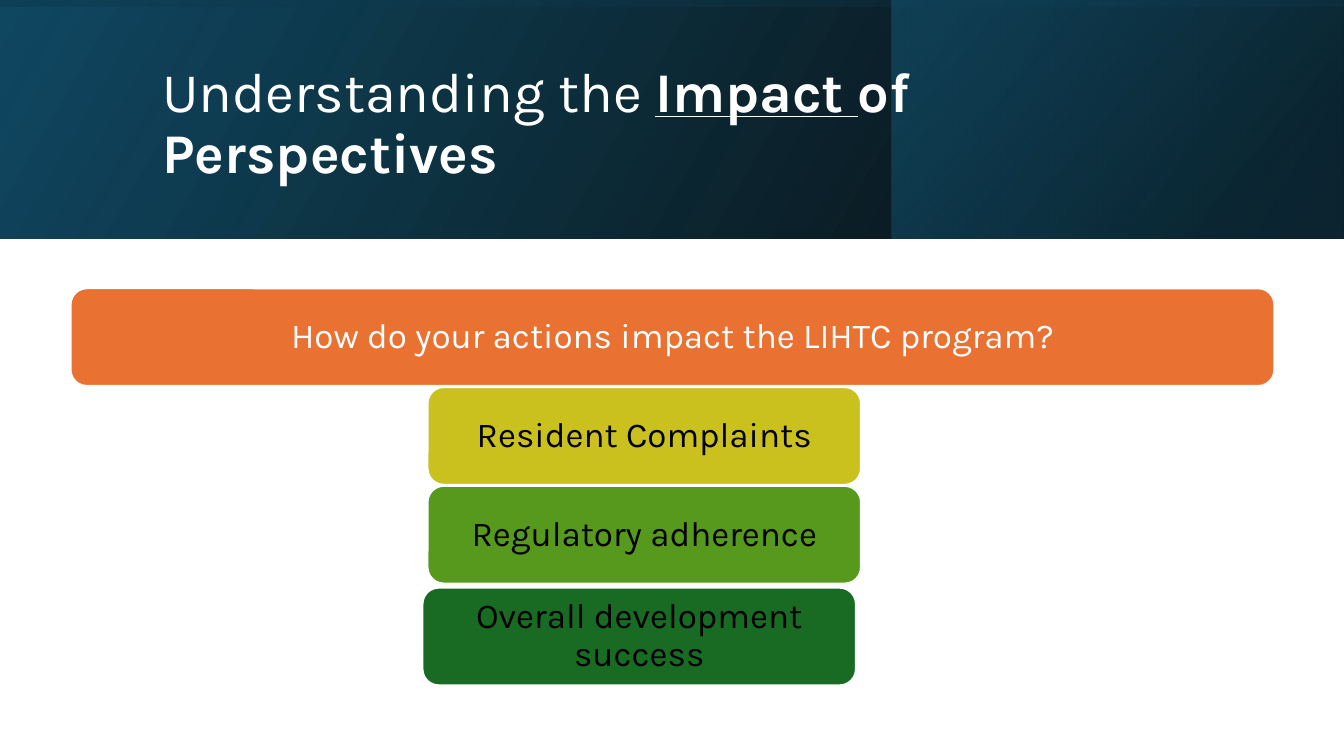
from dataclasses import dataclass

from lxml import etree
from pptx import Presentation
from pptx.dml.color import RGBColor
from pptx.enum.shapes import MSO_SHAPE
from pptx.enum.text import MSO_ANCHOR, MSO_AUTO_SIZE, PP_ALIGN
from pptx.oxml import parse_xml
from pptx.oxml.ns import nsdecls
from pptx.util import Inches, Pt

RECTANGLE, ROUNDED = MSO_SHAPE.RECTANGLE, MSO_SHAPE.ROUNDED_RECTANGLE
MIDDLE, NO_FIT = MSO_ANCHOR.MIDDLE, MSO_AUTO_SIZE.NONE
LEFT, CENTER = PP_ALIGN.LEFT, PP_ALIGN.CENTER

FONT = "Karla"
COLORS = {
    "white": "FFFFFF", "black": "000000", "navy": "104862",
    "deep": "0B3041", "blue": "156082", "orange": "E97132",
    "yellow": "CBC11E", "green": "56991D", "forest": "196B24",
}
CARD_HEIGHT = 0.97


@dataclass
class Stop:
    position: int
    color: str
    opacity: int


@dataclass
class Band:
    left: float
    top: float
    width: float
    height: float
    angle: int
    stops: tuple[Stop, Stop]
    rotation: int = 0


@dataclass
class Card:
    text: str
    left: float
    top: float
    width: float
    fill: str
    ink: str = "black"


@dataclass
class Span:
    text: str
    bold: bool = False
    underline: bool = False


BANDS = [
    Band(0, 0, 13.33, 2.37, 330, (Stop(0, "black", 96), Stop(100, "navy", 100))),
    Band(8.84, 0, 4.48, 2.37, 320, (Stop(19, "deep", 68), Stop(100, "blue", 48))),
    Band(5.48, -5.48, 2.37, 13.33, 350,
         (Stop(23, "navy", 16), Stop(99, "black", 45)), rotation=270),
]
TITLE = [
    Span("Understanding the "),
    Span("Impact ", bold=True, underline=True),
    Span("of Perspectives", bold=True),
]
CARDS = [
    Card("How do your actions impact the LIHTC program?", 0.7, 2.86, 11.94,
         "orange", "white"),
    Card("Resident Complaints", 4.24, 3.84, 4.3, "yellow"),
    Card("Regulatory adherence", 4.24, 4.82, 4.3, "green"),
    Card("Overall development success", 4.19, 5.83, 4.3, "forest"),
]


def rgb(name: str) -> RGBColor:
    return RGBColor.from_string(COLORS[name])


def add_band(page, band: Band) -> None:
    box = page.shapes.add_shape(RECTANGLE, Inches(band.left), Inches(band.top),
                                Inches(band.width), Inches(band.height))
    box.shadow.inherit = False
    box.line.fill.background()
    box.rotation = band.rotation
    properties = box.element.spPr
    properties.xfrm.set("flipH", "1")
    # Gradient with transparency
    gradient = parse_xml(
        f'<a:gradFill {nsdecls("a")} rotWithShape="1"><a:gsLst/>'
        f'<a:lin ang="{band.angle * 60000}" scaled="0"/></a:gradFill>')
    for stop in band.stops:
        gradient[0].append(etree.fromstring(
            f'<a:gs {nsdecls("a")} pos="{stop.position * 1000}">'
            f'<a:srgbClr val="{COLORS[stop.color]}">'
            f'<a:alpha val="{stop.opacity * 1000}"/></a:srgbClr></a:gs>'))
    properties.prstGeom.addnext(gradient)


def add_title(page, spans: list[Span]) -> None:
    title = page.shapes.title
    title.left, title.top = Inches(1.51), Inches(0.38)
    title.width, title.height = Inches(10.63), Inches(1.72)
    # Bring the title in front of the bands
    page.shapes.element.append(title.element)
    frame = title.text_frame
    frame.auto_size, frame.vertical_anchor = NO_FIT, MIDDLE
    para = frame.paragraphs[0]
    para.alignment, para.line_spacing = LEFT, 0.9
    for span in spans:
        run = para.add_run()
        run.text = span.text
        run.font.name, run.font.size = FONT, Pt(40)
        run.font.bold, run.font.underline = span.bold, span.underline
        run.font.color.rgb = rgb("white")


def add_card(page, card: Card) -> None:
    box = page.shapes.add_shape(ROUNDED, Inches(card.left), Inches(card.top),
                                Inches(card.width), Inches(CARD_HEIGHT))
    box.shadow.inherit = False
    box.fill.solid()
    box.fill.fore_color.rgb = rgb(card.fill)
    box.line.color.rgb = rgb("white")
    box.line.width = Pt(1.5)
    frame = box.text_frame
    frame.text = card.text
    frame.word_wrap, frame.vertical_anchor = True, MIDDLE
    para = frame.paragraphs[0]
    para.alignment, para.line_spacing = CENTER, 0.9
    font = para.runs[0].font
    font.name, font.size = FONT, Pt(25)
    font.color.rgb = rgb(card.ink)


def main() -> None:
    deck = Presentation()
    deck.slide_width, deck.slide_height = Inches(13.33), Inches(7.5)
    page = deck.slides.add_slide(deck.slide_layouts[5])
    # Header
    for band in BANDS:
        add_band(page, band)
    add_title(page, TITLE)
    # Question and answers
    for card in CARDS:
        add_card(page, card)
    deck.save("out.pptx")


if __name__ == "__main__":
    main()
